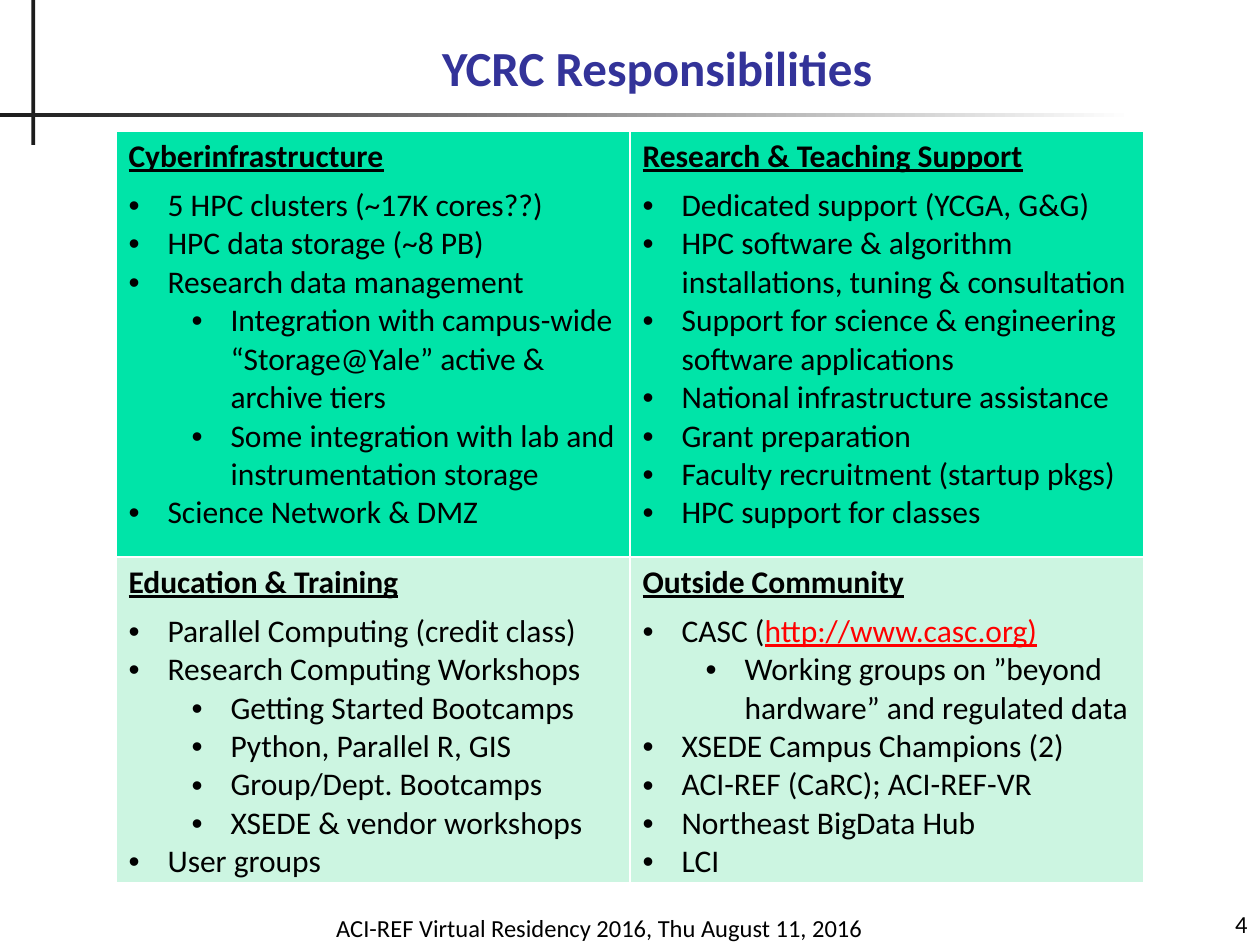
import pptx
import pptx.util
import pptx.dml.color
import pptx.enum.shapes
import pptx.enum.text
from lxml import etree

Inches, Pt = pptx.util.Inches, pptx.util.Pt
ALIGN, ANCHOR = pptx.enum.text.PP_ALIGN, pptx.enum.text.MSO_ANCHOR

# Content: each area is a heading and its (level, text) bullets
TITLE = "YCRC Responsibilities"
FOOTER = "ACI-REF Virtual Residency 2016, Thu August 11, 2016"
PAGE = "4"
CASC_LINK = "http://www.casc.org)"
AREAS = [
    [
        ("Cyberinfrastructure", [
            (0, "5 HPC clusters (~17K cores??)"),
            (0, "HPC data storage (~8 PB)"),
            (0, "Research data management"),
            (1, "Integration with campus-wide “Storage@Yale” active & archive tiers"),
            (1, "Some integration with lab and instrumentation storage"),
            (0, "Science Network & DMZ"),
        ]),
        ("Research & Teaching Support", [
            (0, "Dedicated support (YCGA, G&G)"),
            (0, "HPC software & algorithm installations, tuning & consultation"),
            (0, "Support for science & engineering software applications"),
            (0, "National infrastructure assistance"),
            (0, "Grant preparation"),
            (0, "Faculty recruitment (startup pkgs)"),
            (0, "HPC support for classes"),
        ]),
    ],
    [
        ("Education & Training", [
            (0, "Parallel Computing (credit class)"),
            (0, "Research Computing Workshops"),
            (1, "Getting Started Bootcamps"),
            (1, "Python, Parallel R, GIS"),
            (1, "Group/Dept. Bootcamps"),
            (1, "XSEDE & vendor workshops"),
            (0, "User groups"),
        ]),
        ("Outside Community", [
            (0, "CASC ("),
            (1, "Working groups on ”beyond hardware” and regulated data"),
            (0, "XSEDE Campus Champions (2)"),
            (0, "ACI-REF (CaRC); ACI-REF-VR"),
            (0, "Northeast BigData Hub"),
            (0, "LCI"),
        ]),
    ],
]

# Layout in inches
SLIDE_W, SLIDE_H = 10, 7.5
TABLE_X, TABLE_Y, COLUMN_W = 0.92, 1.04, 4.08
ROW_HEIGHTS = [3.38, 2.52]
ROW_FILLS = ["00E4A8", "CCF5E1"]
HANG, LEVEL_STEP = 0.31, 0.5
INK = "1C1C1C"


def rgb(value):
    return pptx.dml.color.RGBColor.from_string(value)


def add_text(paragraph, text, size=18, color="000000", bold=False, underline=False):
    run = paragraph.add_run()
    run.text = text
    font = run.font
    font.name, font.size, font.color.rgb = "Calibri", Pt(size), rgb(color)
    font.bold, font.underline = bold, underline


def add_label(slide, box, text, align=ALIGN.LEFT, **style):
    frame = slide.shapes.add_textbox(*map(Inches, box)).text_frame
    frame.word_wrap = True
    frame.vertical_anchor = ANCHOR.BOTTOM
    frame.paragraphs[0].alignment = align
    add_text(frame.paragraphs[0], text, **style)


def add_rule(slide, *box):
    rule = slide.shapes.add_shape(pptx.enum.shapes.MSO_SHAPE.RECTANGLE, *map(Inches, box))
    rule.shadow.inherit = False
    rule.line.fill.background()
    return rule


def add_xml(parent, tag, **attributes):
    return etree.SubElement(parent, pptx.oxml.ns.qn(tag), attributes)


def set_bullet(paragraph, level):
    paragraph.level = level
    properties = paragraph._p.get_or_add_pPr()
    properties.set("marL", str(Inches(HANG + level * LEVEL_STEP)))
    properties.set("indent", str(-Inches(HANG)))
    add_xml(properties, "a:buFont", typeface="Arial")
    add_xml(properties, "a:buChar", char="•")


def set_borders(cell, color="FFFFFF", width=1):
    properties = cell._tc.get_or_add_tcPr()
    for side in ("L", "R", "T", "B"):
        line = add_xml(properties, f"a:ln{side}", w=str(Pt(width)))
        add_xml(add_xml(line, "a:solidFill"), "a:srgbClr", val=color)


def fill_area(cell, heading, bullets, fill):
    set_borders(cell)
    cell.fill.solid()
    cell.fill.fore_color.rgb = rgb(fill)
    frame = cell.text_frame
    heading_line = frame.paragraphs[0]
    heading_line.alignment = ALIGN.LEFT
    heading_line.space_after = Pt(6)
    add_text(heading_line, heading, bold=True, underline=True)
    for level, text in bullets:
        paragraph = frame.add_paragraph()
        paragraph.alignment = ALIGN.LEFT
        set_bullet(paragraph, level)
        add_text(paragraph, text)
        if text == "CASC (":
            add_text(paragraph, CASC_LINK, color="FF0000", underline=True)


def main():
    deck = pptx.Presentation()
    deck.slide_width, deck.slide_height = Inches(SLIDE_W), Inches(SLIDE_H)
    slide = deck.slides.add_slide(deck.slide_layouts[6])

    # Crossed rules behind the title
    upright = add_rule(slide, 0.25, 0, 0.03, 1.15)
    upright.fill.solid()
    upright.fill.fore_color.rgb = rgb(INK)
    fading = add_rule(slide, 0, 0.9, 9, 0.03)
    fading.fill.gradient()
    fading.fill.gradient_angle = 0
    for stop, color in zip(fading.fill.gradient_stops, (INK, "FFFFFF")):
        stop.color.rgb = rgb(color)

    # Title and footer
    add_label(slide, (0.83, 0.07, 8.77, 0.74), TITLE, ALIGN.CENTER,
              size=28, color="333399", bold=True)
    add_label(slide, (2.57, 7.03, 4.87, 0.5), FOOTER, size=14)
    add_label(slide, (8.58, 7, 1.42, 0.5), PAGE, ALIGN.RIGHT, size=14)

    # Four areas of responsibility
    columns = len(AREAS[0])
    areas = slide.shapes.add_table(
        len(AREAS), columns, Inches(TABLE_X), Inches(TABLE_Y),
        Inches(columns * COLUMN_W), Inches(sum(ROW_HEIGHTS))).table
    areas.first_row = areas.horz_banding = False
    for r, row in enumerate(AREAS):
        areas.rows[r].height = Inches(ROW_HEIGHTS[r])
        for c, (heading, bullets) in enumerate(row):
            fill_area(areas.cell(r, c), heading, bullets, ROW_FILLS[r])

    deck.save("out.pptx")


if __name__ == "__main__":
    main()
